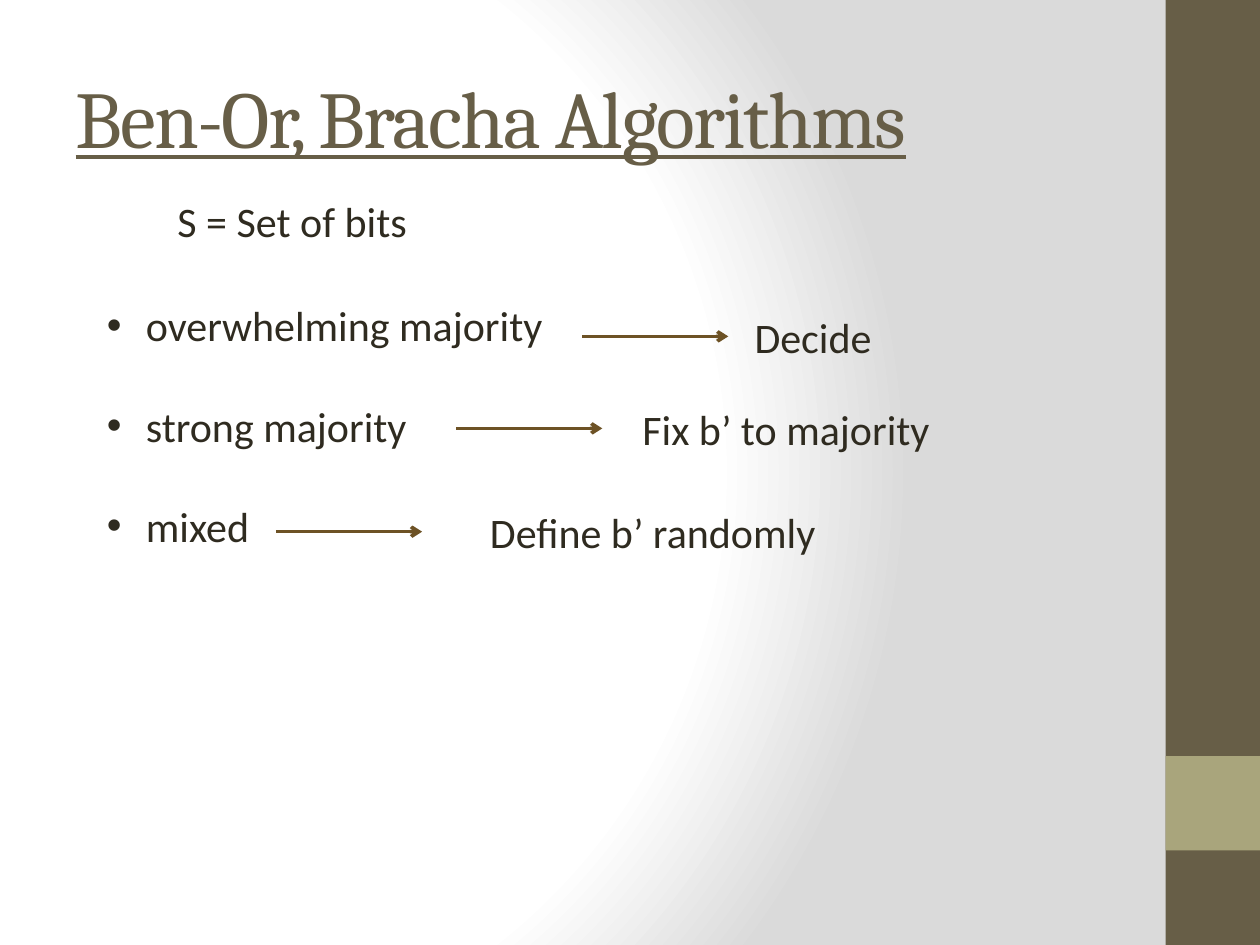
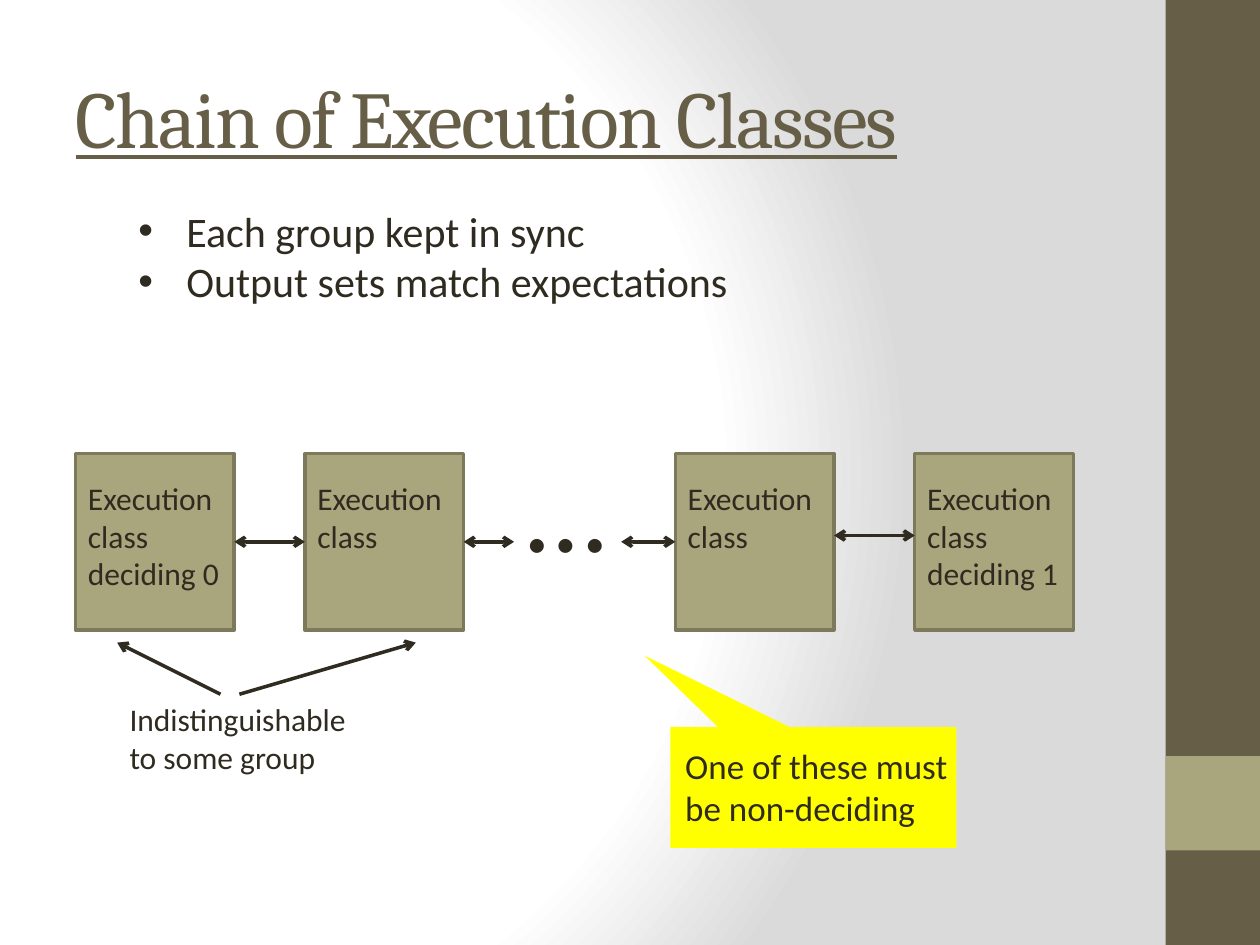
"""Builds two slides on randomized consensus: the algorithms and the execution chain."""
from pptx import Presentation, oxml
from pptx import util as u
from pptx.dml.color import RGBColor
from pptx.enum import shapes, text
from pptx.oxml import ns

PX = 9144
INK, OLIVE, SAGE = "2F2B20", "675E47", "A9A57C"
BROWN, EDGE, YELLOW = "6D5225", "7D7A5C", "FFFF00"
BACKDROP = f"""<a:gradFill {ns.nsdecls('a')} rotWithShape="1"><a:gsLst>
<a:gs pos="0"><a:srgbClr val="FFFFFF"/></a:gs>
<a:gs pos="75000"><a:srgbClr val="FFFFFF"/></a:gs>
<a:gs pos="100000"><a:srgbClr val="DADADA"/></a:gs></a:gsLst>
<a:path path="circle"><a:fillToRect l="20000" t="50000" r="100000" b="50000"/></a:path>
</a:gradFill>"""


def px(*lengths):
    """Turn px lengths into EMU."""
    return [u.Emu(length * PX) for length in lengths]


def color(hex_value):
    """Turn a hex string into a colour."""
    return RGBColor.from_string(hex_value)


def apply(target, values):
    """Set each attribute of the target from a dict."""
    for name, value in values.items():
        setattr(target, name, value)


def write(paragraph, words, size, font="Calibri", hex_value=INK, **extra):
    """Add one formatted run to a paragraph and return it."""
    run = paragraph.add_run()
    run.text = words
    apply(run.font, {"size": u.Pt(size), "name": font, **extra})
    run.font.color.rgb = color(hex_value)
    return run


def add_bullet(paragraph, hang):
    """Give a paragraph a round bullet with a hanging indent."""
    properties = paragraph._p.get_or_add_pPr()
    properties.set("marL", str(hang * PX))
    properties.set("indent", str(-hang * PX))
    for tag, name, value in (("a:buFont", "typeface", "Arial"), ("a:buChar", "char", "•")):
        oxml.xmlchemy.OxmlElement  # noqa
        properties.append(oxml.parse_xml(f'<{tag} {ns.nsdecls("a")} {name}="{value}"/>'))


def add_label(slide, box, lines, size=24, hang=0, gap=0):
    """Place unwrapped lines of text, bulleted when a hang is given."""
    frame = slide.shapes.add_textbox(*px(*box)).text_frame
    apply(frame, {"word_wrap": False, "auto_size": text.MSO_AUTO_SIZE.SHAPE_TO_FIT_TEXT})
    for index, words in enumerate(lines):
        paragraph = frame.add_paragraph() if index else frame.paragraphs[0]
        if index and gap:
            paragraph.space_before = u.Pt(gap)
        if hang:
            add_bullet(paragraph, hang)
        write(paragraph, words, size)


def add_block(slide, box, fill, edge=None, kind=shapes.MSO_SHAPE.RECTANGLE):
    """Place a flat filled shape, outlined when an edge colour is given."""
    block = slide.shapes.add_shape(kind, *px(*box))
    block.shadow.inherit = False
    block.fill.solid()
    block.fill.fore_color.rgb = color(fill)
    if edge:
        block.line.color.rgb = color(edge)
        block.line.width = u.Pt(2)
    else:
        block.line.fill.background()
    return block


def add_arrow(slide, start, end, hex_value=INK, ends=("tailEnd",)):
    """Draw a straight line with arrowheads at the named ends."""
    arrow = slide.shapes.add_connector(shapes.MSO_CONNECTOR.STRAIGHT, *px(*start, *end))
    arrow.line.color.rgb = color(hex_value)
    arrow.line.width = u.Pt(2)
    stroke = arrow.line._get_or_add_ln()
    for end_name in ends:
        stroke.append(oxml.parse_xml(f'<a:{end_name} {ns.nsdecls("a")} type="arrow"/>'))
    arrow.element.spPr.append(oxml.parse_xml(f'<a:effectLst {ns.nsdecls("a")}/>'))


def dress_layout(layout, slide):
    """Give the layout its gradient backdrop and side bands."""
    layout.background.fill.solid()
    backdrop = layout.element.find(".//" + ns.qn("p:bgPr"))
    backdrop.replace(backdrop[0], oxml.parse_xml(BACKDROP))
    for position, (top, height, fill) in enumerate(((0, 750, OLIVE), (600, 75, SAGE))):
        band = add_block(slide, (925, top, 75, height), fill)
        layout.shapes.element.insert(2 + position, band.element)


def set_title(slide, words):
    """Place and format the slide title."""
    title = slide.shapes.title
    apply(title, dict(zip(("left", "top", "width", "height"), px(50, 30, 833, 125))))
    frame = title.text_frame
    apply(frame, {"vertical_anchor": text.MSO_ANCHOR.MIDDLE, "word_wrap": True,
                  "auto_size": text.MSO_AUTO_SIZE.NONE})
    heading = frame.paragraphs[0]
    heading.alignment = text.PP_ALIGN.LEFT
    run = write(heading, words, 46, "Cambria", OLIVE, underline=True)
    run.font._element.set("spc", "-100")


def add_rules(slide, left, top):
    """List the kinds of majority, each with an arrow to its outcome."""
    add_label(slide, (left, top, 369, 212),
              ["overwhelming majority", "strong majority", "mixed"], hang=31, gap=28.5)
    outcomes = (("Decide", 387, 34, 514, 114),
                ("Fix b’ to majority", 287, 107, 425, 257),
                ("Define b’ randomly", 144, 189, 304, 281))
    for outcome, arrow_x, arrow_y, label_x, width in outcomes:
        start = left + arrow_x, top + arrow_y
        add_arrow(slide, start, (start[0] + 116, start[1]), BROWN)
        add_label(slide, (left + label_x, start[1] - 25, width, 50), [outcome])


def add_chain(slide, left, top):
    """Draw the execution classes and the double arrows that link them."""
    size, skip = 126, 85
    name = ["Execution", "class"]
    stations = ((0, size, name + ["deciding 0"]), (182, size, name), (348, skip, None),
                (476, size, name), (666, size, name + ["deciding 1"]))
    for offset, width, lines in stations:
        if lines:
            add_block(slide, (left + offset, top, width, 140), SAGE, EDGE)
            add_label(slide, (left + offset, top + 15, width, 101), lines, 18)
        else:
            add_label(slide, (left + offset, top - 18, width, 121), ["…"], 66)
    for (offset, width, _), following in zip(stations, stations[1:]):
        level = top + (65 if following is stations[-1] else 70)
        add_arrow(slide, (left + offset + width, level), (left + following[0], level),
                  ends=("headEnd", "tailEnd"))


def add_group_note(slide, left, top):
    """Point from a note to the first two classes."""
    add_label(slide, (left, top, 194, 71), ["Indistinguishable", "to some group"], 18)
    for start, end in ((82, 0), (97, 237)):
        add_arrow(slide, (left + start, top), (left + end, top - 41))


def add_callout(slide, left, top):
    """Draw the yellow callout about the non-deciding class."""
    callout = add_block(slide, (left, top, 227, 96), YELLOW,
                        kind=shapes.MSO_SHAPE.RECTANGULAR_CALLOUT)
    for index, reach in enumerate((-0.59, -1.09)):
        callout.adjustments[index] = reach
    add_label(slide, (left + 2, top + 9, 230, 77),
              ["One of these must", "be non-deciding"], 20)


def build_algorithms(slide):
    """Build the slide on the algorithms."""
    set_title(slide, "Ben-Or, Bracha Algorithms")
    add_label(slide, (131, 150, 204, 50), ["S = Set of bits"])
    add_rules(slide, 75, 233)


def build_execution_chain(slide):
    """Build the slide on the chain of execution classes."""
    set_title(slide, "Chain of Execution Classes")
    add_label(slide, (100, 158, 499, 91),
              ["Each group kept in sync", "Output sets match expectations"], hang=38)
    add_chain(slide, 60, 360)
    add_group_note(slide, 93, 551)
    add_callout(slide, 532, 577)


def main():
    """Build and save the presentation."""
    deck = Presentation()
    deck.slide_width, deck.slide_height = px(1000, 750)
    layout = deck.slide_layouts[5]
    algorithms, execution_chain = [deck.slides.add_slide(layout) for _ in range(2)]
    dress_layout(layout, algorithms)
    build_algorithms(algorithms)
    build_execution_chain(execution_chain)
    deck.save("out.pptx")


if __name__ == "__main__":
    main()
